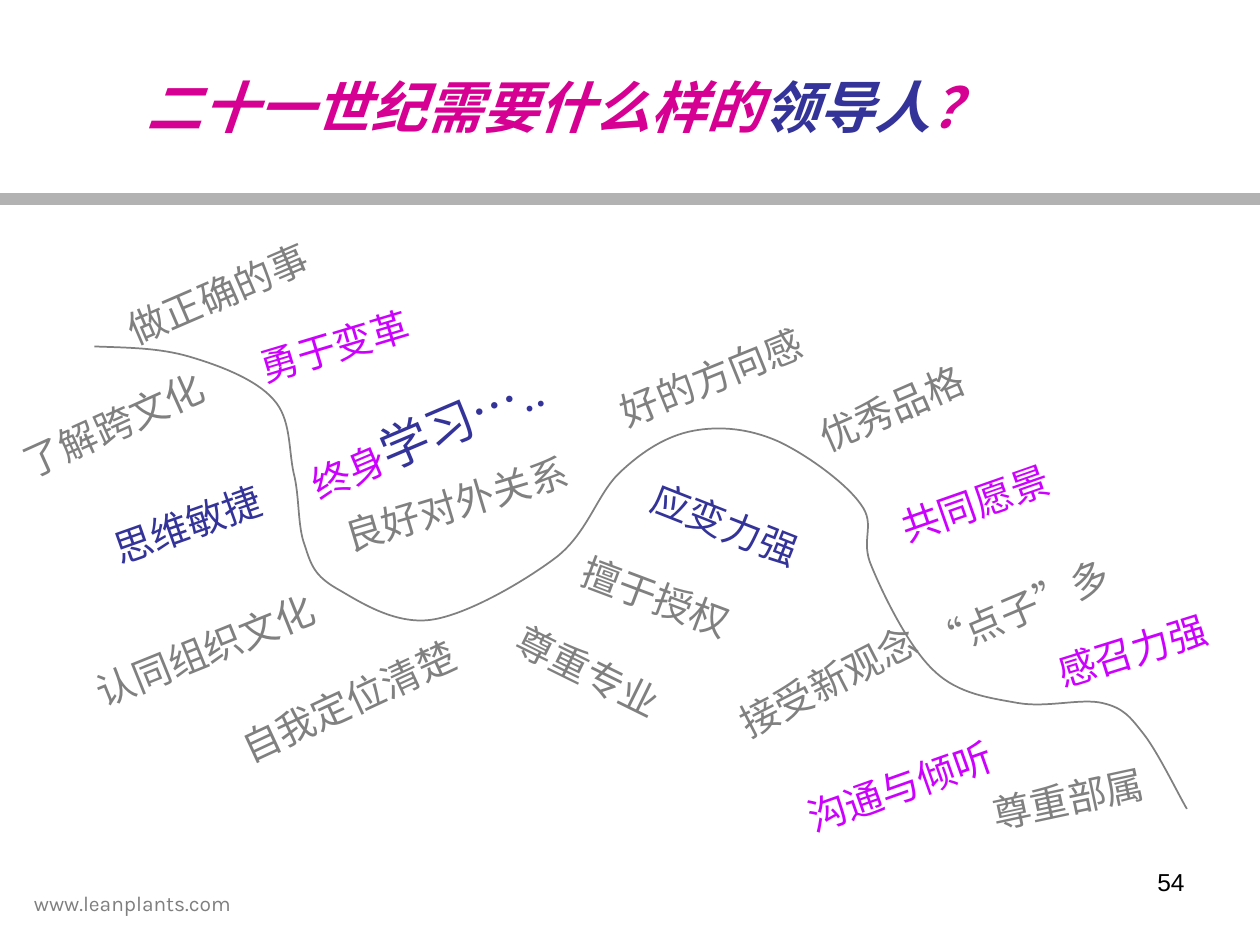
from lxml import etree
from pptx import Presentation
from pptx.dml.color import RGBColor
from pptx.enum.lang import MSO_LANGUAGE_ID
from pptx.enum.shapes import MSO_SHAPE
from pptx.enum.text import MSO_ANCHOR, PP_ALIGN
from pptx.oxml.ns import qn
from pptx.util import Inches, Pt

CHINESE = MSO_LANGUAGE_ID.SIMPLIFIED_CHINESE
COLORS = {"magenta": "D60093", "navy": "333399", "violet": "CC00FF",
          "gray": "808080", "footer": "7F7F7F", "bar": "B2B2B2", "black": "000000"}
SERIF = "Times New Roman"
TRAIT_SIZE = 22

TITLE = [("二十一世纪需要什么样的", "magenta"), ("领导人", "navy"), ("？", "magenta")]

# text, color, left, top, rotation in degrees, line spacing
TRAITS = [
    ("做正确的事", "gray", 0.83, 1.92, -23.4, 1.5),
    ("勇于变革", "violet", 1.92, 2.33, -16.7, 1.5),
    ("良好对外关系", "gray", 2.58, 3.58, -16.8, 1.5),
    ("好的方向感", "gray", 4.75, 2.58, -22, 1.5),
    ("优秀品格", "gray", 6.33, 2.83, -23.5, 1.5),
    ("共同愿景", "violet", 7, 3.58, -19.3, 1.5),
    ("“点子”多", "gray", 7.19, 4.42, -22.9, 1.5),
    ("沟通与倾听", "violet", 6.25, 5.83, -19.5, 1.5),
    ("感召力强", "violet", 8.25, 4.75, -17.3, 1.5),
    ("了解跨文化", "gray", 0, 2.96, -24.3, 1.5),
    ("认同组织文化", "gray", 0.58, 4.75, -22, 1.5),
    ("思维敏捷", "navy", 0.75, 3.75, -19.5, 1.5),
    ("自我定位清楚", "gray", 1.75, 5.33, -25, 1),
    ("应变力强", "navy", 5.08, 3.75, 21.6, 1.5),
    ("擅于授权", "gray", 4.5, 4.5, 20.6, 1),
    ("接受新观念", "gray", 5.67, 5, -27.3, 1.5),
    ("尊重部属", "gray", 7.75, 5.92, -12.1, 1.5),
    ("尊重专业", "gray", 4, 4.92, 26.2, 1.5),
]

# Each row: two control points and the end point of one Bezier segment
CURVE_START = (0.75, 2.75)
CURVE = [
    ((1.01, 2.76), (1.26, 2.76), (1.5, 2.83)),
    ((1.74, 2.9), (2.03, 3.01), (2.17, 3.17)),
    ((2.31, 3.32), (2.29, 3.56), (2.33, 3.75)),
    ((2.38, 3.94), (2.36, 4.18), (2.42, 4.33)),
    ((2.47, 4.49), (2.5, 4.57), (2.67, 4.67)),
    ((2.83, 4.76), (3.12, 4.96), (3.42, 4.92)),
    ((3.71, 4.88), (4.17, 4.61), (4.42, 4.42)),
    ((4.67, 4.22), (4.74, 3.92), (4.92, 3.75)),
    ((5.1, 3.58), (5.29, 3.46), (5.5, 3.42)),
    ((5.71, 3.38), (5.94, 3.4), (6.17, 3.5)),
    ((6.39, 3.6), (6.71, 3.83), (6.83, 4)),
    ((6.96, 4.17), (6.82, 4.28), (6.92, 4.5)),
    ((7.01, 4.72), (7.22, 5.15), (7.42, 5.33)),
    ((7.61, 5.51), (7.86, 5.54), (8.08, 5.58)),
    ((8.31, 5.62), (8.58, 5.54), (8.75, 5.58)),
    ((8.92, 5.62), (8.97, 5.69), (9.08, 5.83)),
    ((9.19, 5.97), (9.36, 6.32), (9.42, 6.42)),
]


def rgb(name):
    return RGBColor.from_string(COLORS[name])


def add_run(paragraph, text, color, size, face=SERIF):
    run = paragraph.add_run()
    run.text = text
    run.font.size = Pt(size)
    run.font.name = face
    run.font.color.rgb = rgb(color)
    if face == SERIF:
        run.font.language_id = CHINESE
    return run


def add_label(slide, runs, left, top, width, height, rotation=0, spacing=1, wrap=True):
    """Add a text box; runs holds the arguments of add_run after the paragraph."""
    box = slide.shapes.add_textbox(*map(Inches, (left, top, width, height)))
    box.rotation = rotation
    box.text_frame.word_wrap = wrap
    paragraph = box.text_frame.paragraphs[0]
    paragraph.line_spacing = spacing
    for run in runs:
        add_run(paragraph, *run)
    return paragraph


def add_title(slide):
    title = slide.shapes.title
    title.left, title.top, title.width, title.height = map(Inches, (1.06, 0.52, 8.08, 0.64))
    title.text_frame.vertical_anchor = MSO_ANCHOR.MIDDLE
    paragraph = title.text_frame.paragraphs[0]
    paragraph.alignment = PP_ALIGN.LEFT
    for text, color in TITLE:
        run = add_run(paragraph, text, color, 32)
        run.font.bold = run.font.italic = True


def add_curve(slide):
    """Draw straight segments between the end points, then bend each into a Bezier."""
    def emu(point):
        return tuple(map(Inches, point))

    start_x, start_y = emu(CURVE_START)
    builder = slide.shapes.build_freeform(start_x, start_y)
    builder.add_line_segments([emu(end) for _, _, end in CURVE], close=False)
    curve = builder.convert_to_shape()
    lines = list(curve.element.iter(qn("a:lnTo")))
    for line, points in zip(lines, CURVE):
        bend = etree.Element(qn("a:cubicBezTo"))
        for x, y in map(emu, points):
            etree.SubElement(bend, qn("a:pt"), x=str(x - start_x), y=str(y - start_y))
        line.getparent().replace(line, bend)
    curve.shadow.inherit = False
    curve.fill.background()
    curve.line.color.rgb = rgb("gray")
    curve.line.width = Pt(1)


def add_bar(slide):
    bar = slide.shapes.add_shape(MSO_SHAPE.RECTANGLE, 0, Inches(1.54), Inches(10), Inches(0.08))
    bar.shadow.inherit = False
    bar.fill.solid()
    bar.fill.fore_color.rgb = rgb("bar")
    bar.line.color.rgb = rgb("bar")
    bar.line.width = Pt(0.75)


def main():
    deck = Presentation()
    deck.slide_width, deck.slide_height = Inches(10), Inches(7.5)
    slide = deck.slides.add_slide(deck.slide_layouts[5])

    add_title(slide)
    add_label(slide, [("www.leanplants.com", "footer", 12, "Karla")], 0.17, 7.02, 2.51, 0.34)
    page = add_label(slide, [("54", "black", 14, "Arial")], 7.17, 6.83, 2.33, 0.52)
    page.alignment = PP_ALIGN.RIGHT
    add_curve(slide)

    add_label(slide, [("终身", "violet", TRAIT_SIZE), ("学习…..", "navy", 28)],
              2.24, 2.88, 2.47, 0.81, -23, 1.5)
    for text, color, left, top, rotation, spacing in TRAITS:
        width = len(text) * TRAIT_SIZE / 72 + 0.2
        height = 0.1 + TRAIT_SIZE * 1.2 * spacing / 72
        add_label(slide, [(text, color, TRAIT_SIZE)], left, top, width, height,
                  rotation, spacing, wrap=False)
    add_bar(slide)
    deck.save("out.pptx")


if __name__ == "__main__":
    main()
